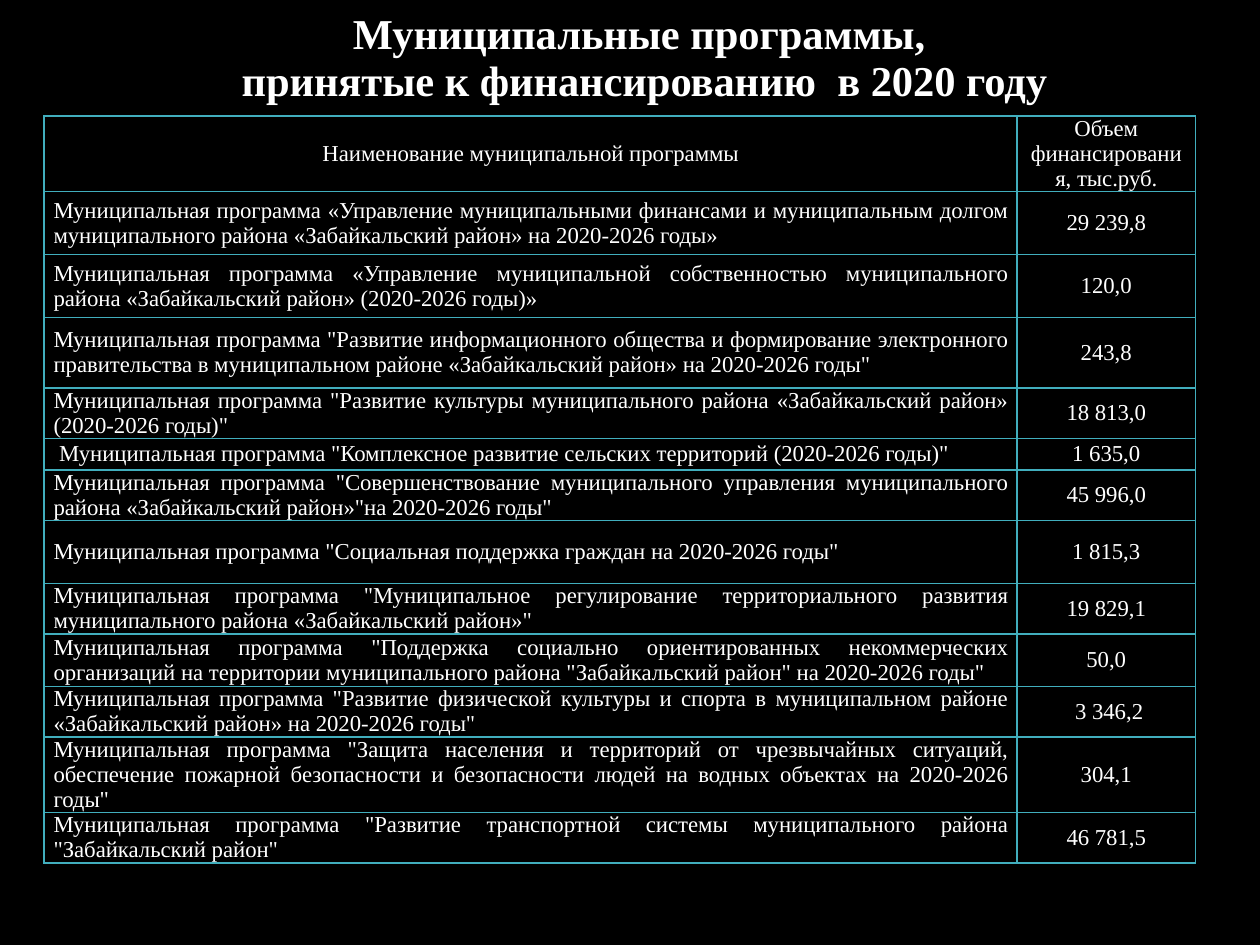
import pptx
import pptx.util
import pptx.dml.color
import pptx.enum.text
import pptx.oxml.ns
from lxml import etree

Inches = pptx.util.Inches
Pt = pptx.util.Pt
ALIGN = pptx.enum.text.PP_ALIGN
MIDDLE = pptx.enum.text.MSO_ANCHOR.MIDDLE

COLORS = {"back": "000000", "text": "FFFFFF", "line": "41AEBD"}
TITLE = "Муниципальные программы, \vпринятые к финансированию  в 2020 году"
HEAD = ("Наименование муниципальной программы", "Объем финансирования, тыс.руб.")
PREFIX = "Муниципальная программа "
WIDTHS = (7.72, 1.42)

# name after the shared prefix, amount, row height
ROWS = [
    ("«Управление муниципальными финансами и муниципальным долгом "
     "муниципального района «Забайкальский район» на 2020-2026 годы»", "29 239,8", 0.5),
    ("«Управление муниципальной собственностью муниципального района "
     "«Забайкальский район» (2020-2026 годы)»", "120,0", 0.5),
    ('"Развитие информационного общества и формирование электронного правительства '
     'в муниципальном районе «Забайкальский район» на 2020-2026 годы"', "243,8", 0.56),
    ('"Развитие культуры муниципального района «Забайкальский район» '
     '(2020-2026 годы)"', "18 813,0", 0.4),
    ('"Комплексное развитие сельских территорий (2020-2026 годы)"', "1 635,0", 0.25),
    ('"Совершенствование муниципального управления муниципального района '
     '«Забайкальский район»"на 2020-2026 годы"', "45 996,0", 0.4),
    ('"Социальная поддержка граждан на 2020-2026 годы"', "1 815,3", 0.5),
    ('"Муниципальное регулирование территориального развития муниципального района '
     '«Забайкальский район»"', "19 829,1", 0.4),
    ('"Поддержка социально ориентированных некоммерческих организаций на территории '
     'муниципального района "Забайкальский район" на 2020-2026 годы"', "50,0", 0.42),
    ('"Развитие физической культуры и спорта в муниципальном районе '
     '«Забайкальский район» на 2020-2026 годы"', " 3 346,2", 0.4),
    ('"Защита населения и территорий от чрезвычайных ситуаций, обеспечение пожарной '
     'безопасности и безопасности людей на водных объектах на 2020-2026 годы"', "304,1", 0.6),
    ('"Развитие транспортной системы муниципального района "Забайкальский район"',
     "46 781,5", 0.4),
]


def color(name):
    return pptx.dml.color.RGBColor.from_string(COLORS[name])


def apply(target, values):
    for key, value in values.items():
        setattr(target, key, value)


def write(frame, text, size, align, pitch, bold=False):
    para = frame.paragraphs[0]
    para.text = text
    apply(para, {"alignment": align, "line_spacing": pitch})
    for run in para.runs:
        apply(run.font, {"name": "Times New Roman", "size": Pt(size), "bold": bold})
        run.font.color.rgb = color("text")


def border(cell):
    """Draw a one-point line on each side, ahead of the cell fill."""
    props = cell._tc.get_or_add_tcPr()
    tag = pptx.oxml.ns.qn
    for place, side in enumerate(("a:lnL", "a:lnR", "a:lnT", "a:lnB")):
        line = etree.Element(tag(side), w=str(Pt(1)))
        fill = etree.SubElement(line, tag("a:solidFill"))
        etree.SubElement(fill, tag("a:srgbClr"), val=COLORS["line"])
        props.insert(place, line)


def add_title(slide):
    box = slide.shapes.add_textbox(Inches(0.23), Inches(0.16), Inches(9.77), Inches(0.62))
    frame = box.text_frame
    apply(frame, {"word_wrap": True, "vertical_anchor": MIDDLE})
    write(frame, TITLE, 24.3, ALIGN.CENTER, 0.92, True)


def fill_cell(cell, text, align):
    apply(cell, {"margin_left": Inches(0.075), "margin_right": Inches(0.075),
                 "margin_top": 0, "margin_bottom": 0, "vertical_anchor": MIDDLE})
    cell.fill.background()
    write(cell.text_frame, text, 13, align, Pt(14.3))
    border(cell)


def add_table(slide):
    rows = [(*HEAD, 0.6)]
    for name, amount, height in ROWS:
        lead = " " if name.startswith('"Комплексное') else ""
        rows.append((lead + PREFIX + name, amount, height))
    total = sum(row[2] for row in rows)
    table = slide.shapes.add_table(len(rows), len(WIDTHS), Inches(0.35), Inches(0.92),
                                   Inches(sum(WIDTHS)), Inches(total)).table
    apply(table, {"first_row": False, "horz_banding": False})
    for column, width in zip(table.columns, WIDTHS):
        column.width = Inches(width)
    for index, (name, amount, height) in enumerate(rows):
        table.rows[index].height = Inches(height)
        fill_cell(table.cell(index, 0), name, ALIGN.JUSTIFY if index else ALIGN.CENTER)
        fill_cell(table.cell(index, 1), amount, ALIGN.CENTER)


def main():
    deck = pptx.Presentation()
    apply(deck, {"slide_width": Inches(10), "slide_height": Inches(7.5)})
    slide = deck.slides.add_slide(deck.slide_layouts[6])
    slide.background.fill.solid()
    slide.background.fill.fore_color.rgb = color("back")
    add_title(slide)
    add_table(slide)
    deck.save("out.pptx")


if __name__ == "__main__":
    main()
